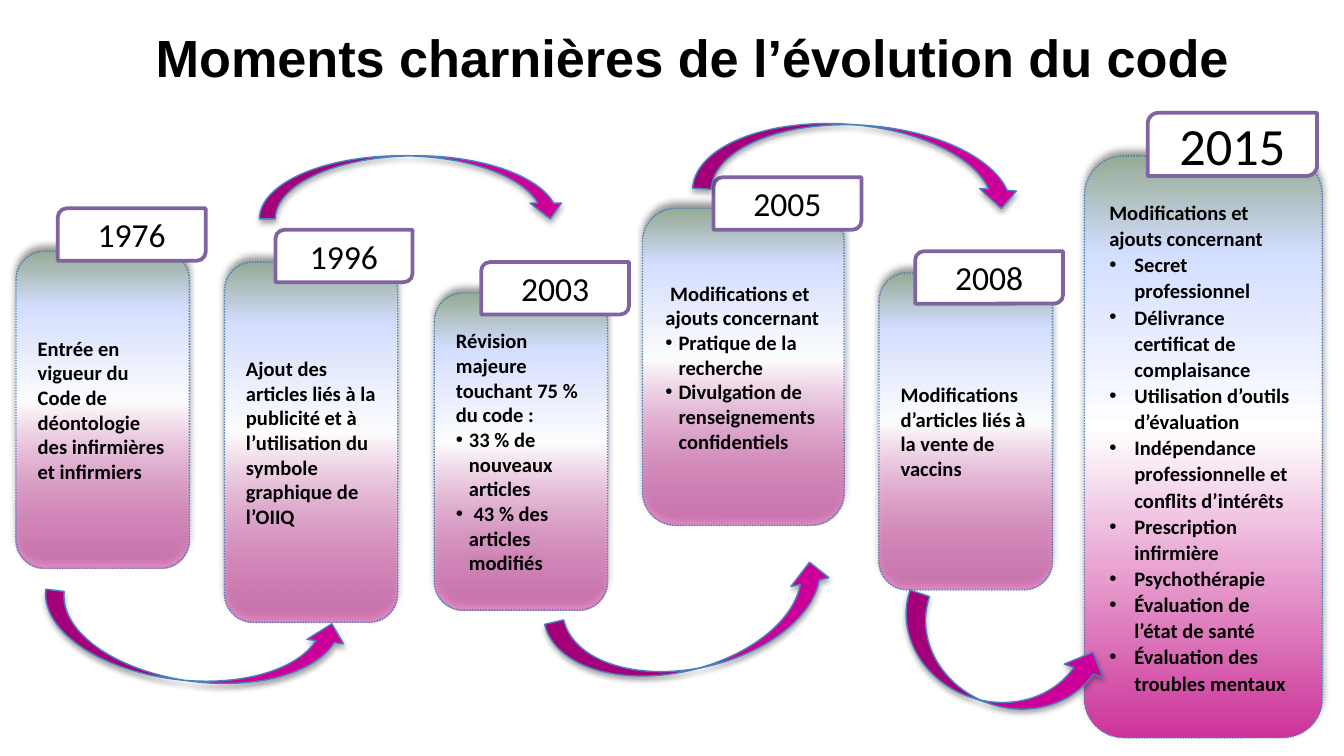
import pptx
import pptx.dml.color
import pptx.enum.dml
import pptx.enum.shapes
import pptx.enum.text
import pptx.oxml
import pptx.oxml.ns
import pptx.util

Pt = pptx.util.Pt
SHAPES = pptx.enum.shapes.MSO_SHAPE
ALIGN = pptx.enum.text.PP_ALIGN
NAMESPACE = pptx.oxml.ns.nsdecls("a")

COLORS = {
    "text": "000000",
    "white": "FFFFFF",
    "pink": "CC3399",
    "blue": "D4DEFF",
    "green": "96AB94",
    "outline": "4B7EBC",
    "purple": "8064A2",
    "arrow": "CC0099",
}

# year, card box, label box, lead paragraphs, bullets
MILESTONES = [
    ("1976", (8.6, 134.6, 92.9, 169.9), (31, 111.6, 79.2, 28.1),
     ["Entrée en vigueur du Code de déontologie des infirmières", "et infirmiers"], []),
    ("1996", (120.2, 140.4, 92.9, 193), (147.6, 123.1, 73.4, 28.1),
     ["Ajout des articles liés à la publicité et à l’utilisation du symbole "
      "graphique de l’OIIQ"], []),
    ("2003", (232.6, 157, 92.9, 169.9), (257.8, 140.4, 79.2, 28.1),
     ["Révision majeure touchant 75 % du code :"],
     ["33 % de nouveaux articles", " 43 % des articles modifiés"]),
    ("2005", (344.2, 111.6, 108, 169.9), (382.3, 95, 79.2, 28.1),
     [" Modifications et ajouts concernant"],
     ["Pratique de la recherche", "Divulgation de renseignements confidentiels"]),
    ("2008", (470.9, 146.2, 92.9, 169.9), (490.3, 134.6, 79.2, 28.1),
     ["Modifications d’articles liés à la vente de vaccins"], []),
    ("2015", (581, 83.5, 127.4, 311.8), (614.9, 60.5, 90.7, 33.8),
     ["Modifications et ajouts concernant"],
     ["Secret professionnel", "Délivrance certificat de complaisance",
      "Utilisation d’outils d’évaluation",
      "Indépendance professionnelle et conflits d’intérêts",
      "Prescription infirmière", "Psychothérapie",
      "Évaluation de l’état de santé", "Évaluation des troubles mentaux"]),
]
LATEST = "2015"

# box, rotation, whether the arrow arches over the cards
ARROWS = [
    ((21.6, 325.4, 164.2, 39.6), 6.9, False),
    ((294.5, 316.1, 156.2, 41.8), 346.8, False),
    ((139, 83.5, 164.2, 33.8), 0, True),
    ((372.2, 67, 175.7, 39.6), 3.8, True),
    ((477.4, 333.4, 114.5, 43.9), 18.8, False),
]


def rgb(name):
    return pptx.dml.color.RGBColor.from_string(COLORS[name])


def add_run(paragraph, text, size, font, bold=False):
    run = paragraph.add_run()
    run.text = text
    run.font.size = Pt(size)
    run.font.name = font
    run.font.bold = bold
    run.font.color.rgb = rgb("text")
    return run


def add_outlined_shape(slide, kind, box, line_color, line_width):
    shape = slide.shapes.add_shape(kind, *map(Pt, box))
    shape.shadow.inherit = False
    shape.line.color.rgb = rgb(line_color)
    shape.line.width = Pt(line_width)
    return shape


def set_solid_fill(shape, color):
    shape.fill.solid()
    shape.fill.fore_color.rgb = rgb(color)


def set_shadow(shape, opacity, blur, distance, angle):
    effects = shape._element.spPr.find(pptx.oxml.ns.qn("a:effectLst"))
    effects.append(pptx.oxml.parse_xml(
        f'<a:outerShdw {NAMESPACE} blurRad="{Pt(blur)}" dist="{Pt(distance)}" '
        f'dir="{angle * 60000}" rotWithShape="0"><a:srgbClr val="{COLORS["text"]}">'
        f'<a:alpha val="{opacity * 1000}"/></a:srgbClr></a:outerShdw>'))


def set_gradient(shape, bottom_opacity):
    """Fill upwards from pink to green."""
    stops = [(0, "pink", bottom_opacity), (53, "white", 100),
             (83, "blue", 100), (100, "green", 100)]
    stops_xml = "".join(
        f'<a:gs pos="{position * 1000}"><a:srgbClr val="{COLORS[color]}">'
        f'<a:alpha val="{opacity * 1000}"/></a:srgbClr></a:gs>'
        for position, color, opacity in stops)
    geometry = shape._element.spPr.find(pptx.oxml.ns.qn("a:prstGeom"))
    geometry.addnext(pptx.oxml.parse_xml(
        f'<a:gradFill {NAMESPACE} rotWithShape="1"><a:gsLst>{stops_xml}</a:gsLst>'
        f'<a:lin ang="{270 * 60000}" scaled="0"/></a:gradFill>'))


def set_bullet(paragraph, indent):
    properties = paragraph._p.get_or_add_pPr()
    properties.set("marL", str(Pt(indent)))
    properties.set("indent", str(-Pt(indent)))
    for child in ('buFont {} typeface="Arial"', 'buChar {} char="•"'):
        properties.append(pptx.oxml.parse_xml(f"<a:{child.format(NAMESPACE)}/>"))


def add_title(slide, text):
    title = slide.shapes.add_textbox(Pt(76.3), Pt(10), Pt(611.3), Pt(67.7))
    title.text_frame.word_wrap = True
    add_run(title.text_frame.paragraphs[0], text, 28, "Arial", bold=True)


def add_card(slide, box, leads, bullets, is_latest):
    card = add_outlined_shape(slide, SHAPES.ROUNDED_RECTANGLE, box, "outline", 0.75)
    card.line.dash_style = pptx.enum.dml.MSO_LINE.ROUND_DOT
    set_gradient(card, 100 if is_latest else 56)
    set_shadow(card, 40, 4, 3, 270)
    frame = card.text_frame
    frame.word_wrap = True
    frame.vertical_anchor = pptx.enum.text.MSO_ANCHOR.MIDDLE
    for index, text in enumerate(leads + bullets):
        paragraph = frame.add_paragraph() if index else frame.paragraphs[0]
        paragraph.alignment = ALIGN.LEFT
        if is_latest:
            paragraph.line_spacing = Pt(14)
        if index >= len(leads):
            set_bullet(paragraph, 13.5 if is_latest else 7)
        add_run(paragraph, text, 11, "Calibri", bold=True)


def add_year_label(slide, box, year, size):
    label = add_outlined_shape(slide, SHAPES.ROUND_2_DIAG_RECTANGLE, box, "purple", 2)
    set_solid_fill(label, "white")
    label.text_frame.vertical_anchor = pptx.enum.text.MSO_ANCHOR.MIDDLE
    paragraph = label.text_frame.paragraphs[0]
    paragraph.alignment = ALIGN.CENTER
    add_run(paragraph, year, size, "Calibri")


def add_arrow(slide, box, rotation, arches_over):
    arrow = add_outlined_shape(slide, SHAPES.CURVED_UP_ARROW, box, "outline", 0.75)
    set_solid_fill(arrow, "arrow")
    set_shadow(arrow, 35, 3.1, 1.8, 90)
    arrow.rotation = rotation
    if arches_over:
        arrow._element.spPr.xfrm.set("flipV", "1")


def main():
    presentation = pptx.Presentation()
    presentation.slide_width = Pt(720)
    presentation.slide_height = Pt(405)
    slide = presentation.slides.add_slide(presentation.slide_layouts[6])

    add_title(slide, "Moments charnières de l’évolution du code")
    for year, card_box, _, leads, bullets in MILESTONES:
        add_card(slide, card_box, leads, bullets, year == LATEST)
    for year, _, label_box, _, _ in MILESTONES:
        add_year_label(slide, label_box, year, 28 if year == LATEST else 18)
    for box, rotation, arches_over in ARROWS:
        add_arrow(slide, box, rotation, arches_over)

    presentation.save("out.pptx")


if __name__ == "__main__":
    main()
